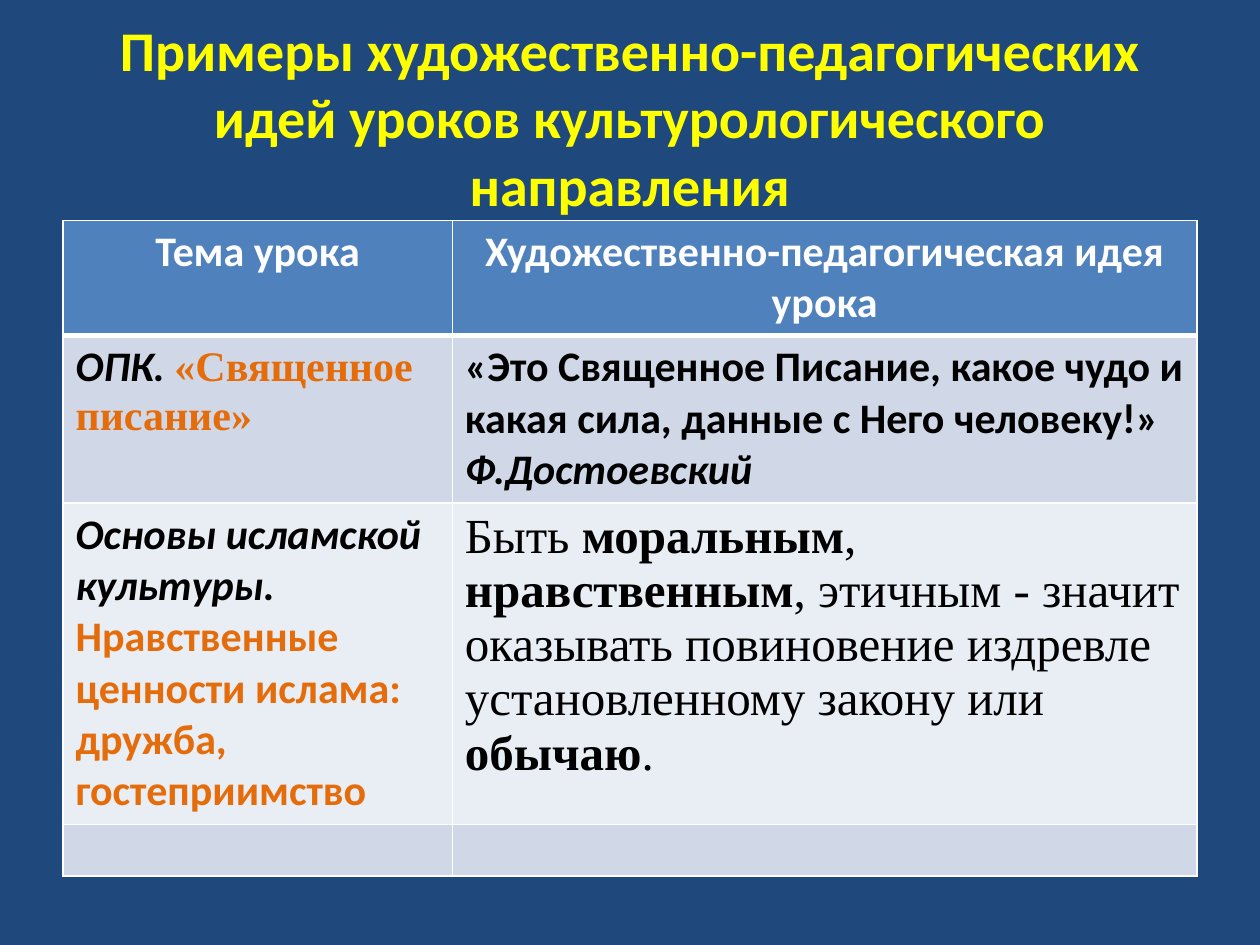
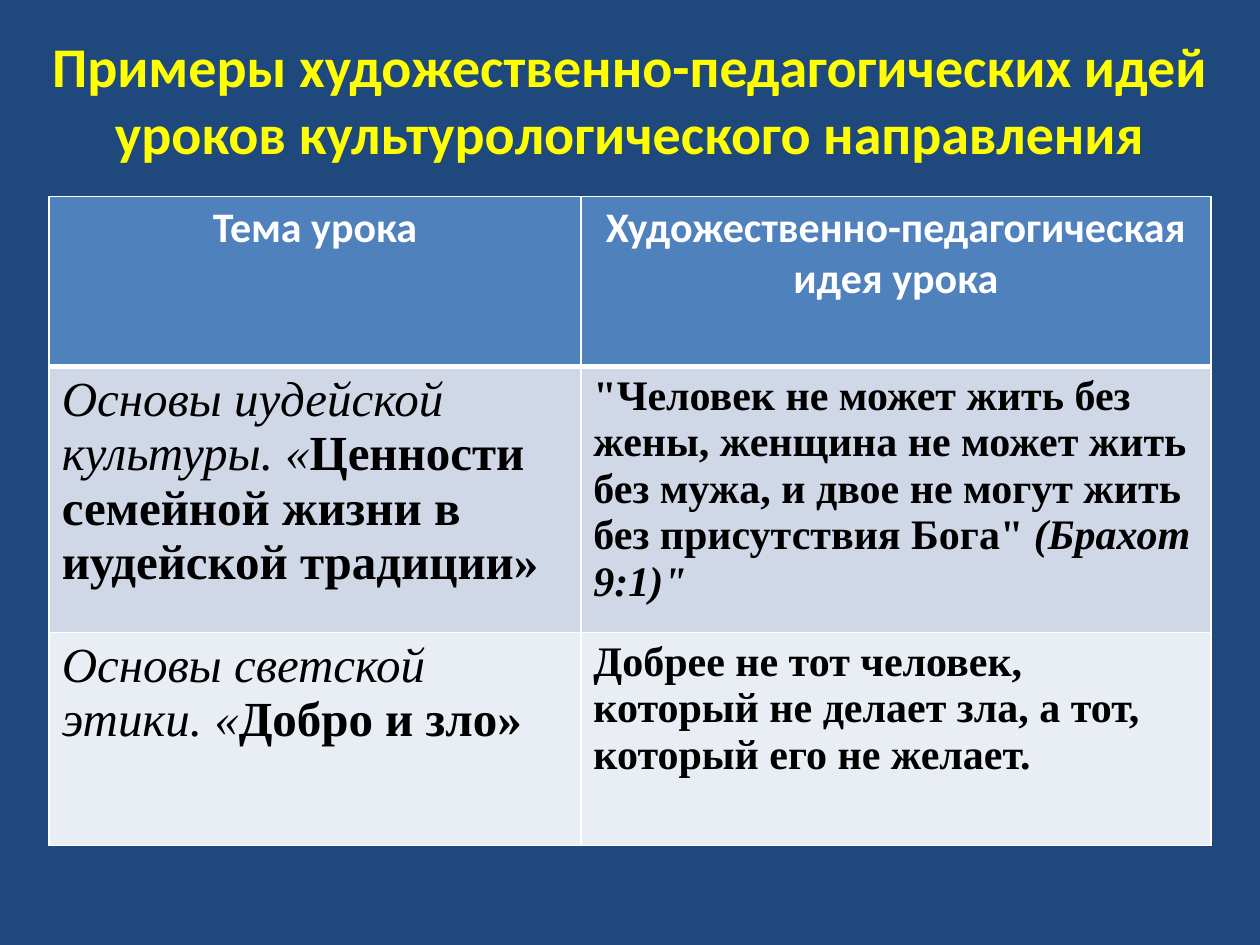
from lxml import etree
from pptx import Presentation
from pptx.dml.color import RGBColor
from pptx.enum.text import MSO_ANCHOR, MSO_AUTO_SIZE, PP_ALIGN
from pptx.oxml.ns import qn
from pptx.util import Inches, Pt

NAVY = RGBColor(0x1F, 0x49, 0x7D)
YELLOW = RGBColor(0xFF, 0xFF, 0x00)
WHITE = RGBColor(0xFF, 0xFE, 0xFF)
BLACK = RGBColor(0x00, 0x00, 0x00)
ORANGE = RGBColor(0xE4, 0x6C, 0x0A)
HEADER_BLUE = RGBColor(0x4F, 0x81, 0xBD)
BANDS = [RGBColor(0xD0, 0xD8, 0xE8), RGBColor(0xE9, 0xED, 0xF4)]
SANS, SERIF = "Calibri", "Times New Roman"

TITLE = "Примеры художественно-педагогических идей уроков культурологического направления"
HEADERS = ["Тема урока", "Художественно-педагогическая идея урока"]
SIGNATURE_TAB = 5.42

SUBJECT = dict(italic=True)
TOPIC = dict(color=ORANGE)
SERIF_BOLD = dict(font=SERIF)
LARGE = dict(font=SERIF, size=28, bold=False)
LARGE_BOLD = dict(font=SERIF, size=28)
LARGE_ITALIC = dict(LARGE, italic=True)

SLIDES = [
    dict(
        title_box=(0.5, 0.3, 9, 1.25),
        table_at=(0.5, 1.75),
        cols=[3.09, 5.91],
        rows=[0.91, 1.33, 2.55, 0.41],
        body=[
            [[("ОПК. ", SUBJECT), ("«Священное писание»", dict(TOPIC, font=SERIF))],
             [("«Это Священное Писание, какое чудо и какая сила, данные с Него человеку!»\t", {}),
              ("Ф.Достоевский", SUBJECT)]],
            [[("Основы исламской культуры. ", SUBJECT),
              ("Нравственные ценности ислама: дружба, гостеприимство", TOPIC)],
             [("Быть ", LARGE), ("моральным", LARGE_BOLD), (", ", LARGE),
              ("нравственным", LARGE_BOLD),
              (", этичным - значит оказывать повиновение издревле установленному закону или ", LARGE),
              ("обычаю", LARGE_BOLD), (".", LARGE)]],
            [[], []],
        ],
    ),
    dict(
        title_box=(0, 0, 10, 1.56),
        table_at=(0.39, 1.56),
        cols=[4.22, 5],
        rows=[1.35, 2.11, 1.69],
        body=[
            [[("Основы иудейской культуры. «", LARGE_ITALIC),
              ("Ценности семейной жизни в иудейской традиции»", LARGE_BOLD)],
             [('"Человек не может жить без жены, женщина не может жить без мужа, '
               'и двое не могут жить без присутствия Бога" ', SERIF_BOLD),
              ('(Брахот 9:1)"', dict(SERIF_BOLD, italic=True))]],
            [[("Основы светской этики. «", LARGE_ITALIC), ("Добро и зло»", LARGE_BOLD)],
             [("Добрее не тот человек, который не делает зла, а тот, который его не желает.",
               SERIF_BOLD)]],
        ],
    ),
]


def add_text(p, text, font=SANS, size=24, color=BLACK, bold=True, italic=False):
    """Append a formatted run to a paragraph."""
    r = p.add_run()
    r.text = text
    r.font.name, r.font.size = font, Pt(size)
    r.font.color.rgb = color
    r.font.bold, r.font.italic = bold, italic


def add_right_tab(p, position):
    """Give a paragraph one right-aligned tab stop."""
    tabs = etree.SubElement(p._p.get_or_add_pPr(), qn("a:tabLst"))
    etree.SubElement(tabs, qn("a:tab"), pos=str(Inches(position)), algn="r")


def style_cell(cell, fill, top=1, bottom=1):
    """Set the borders and then the fill of a cell."""
    tc_pr = cell._tc.get_or_add_tcPr()
    for side, width in zip("LRTB", (1, 1, top, bottom)):
        line = etree.SubElement(tc_pr, qn(f"a:ln{side}"), w=str(Pt(width)))
        solid = etree.SubElement(line, qn("a:solidFill"))
        etree.SubElement(solid, qn("a:srgbClr"), val=str(WHITE))
    cell.fill.solid()
    cell.fill.fore_color.rgb = fill


def add_title(s, box):
    """Place and format the slide title."""
    sp = s.shapes.title
    sp.left, sp.top, sp.width, sp.height = map(Inches, box)
    tf = sp.text_frame
    tf.word_wrap = True
    tf.auto_size = MSO_AUTO_SIZE.NONE
    tf.vertical_anchor = MSO_ANCHOR.MIDDLE
    p = tf.paragraphs[0]
    p.alignment = PP_ALIGN.CENTER
    add_text(p, TITLE, size=32, color=YELLOW)


def add_lesson_table(s, at, cols, rows, body):
    """Build the table of lesson topics and ideas."""
    box = (*at, sum(cols), sum(rows))
    table = s.shapes.add_table(len(rows), len(cols), *map(Inches, box)).table
    for col, width in zip(table.columns, cols):
        col.width = Inches(width)
    for row, height in zip(table.rows, rows):
        row.height = Inches(height)
    for c, header in enumerate(HEADERS):
        cell = table.cell(0, c)
        style_cell(cell, HEADER_BLUE, bottom=3)
        p = cell.text_frame.paragraphs[0]
        p.alignment = PP_ALIGN.CENTER
        add_text(p, header, color=WHITE)
    for i, row in enumerate(body):
        for c, runs in enumerate(row):
            cell = table.cell(i + 1, c)
            style_cell(cell, BANDS[i % 2], top=1 if i else 3)
            p = cell.text_frame.paragraphs[0]
            if any("\t" in text for text, _ in runs):
                add_right_tab(p, SIGNATURE_TAB)
            for text, style in runs:
                add_text(p, text, **style)


def main():
    """Build and save the presentation."""
    prs = Presentation()
    prs.slide_width, prs.slide_height = Inches(10), Inches(7.5)
    background = prs.slide_master.background.fill
    background.solid()
    background.fore_color.rgb = NAVY
    for data in SLIDES:
        s = prs.slides.add_slide(prs.slide_layouts[5])
        add_title(s, data["title_box"])
        add_lesson_table(s, data["table_at"], data["cols"], data["rows"], data["body"])
    prs.save("out.pptx")


if __name__ == "__main__":
    main()
